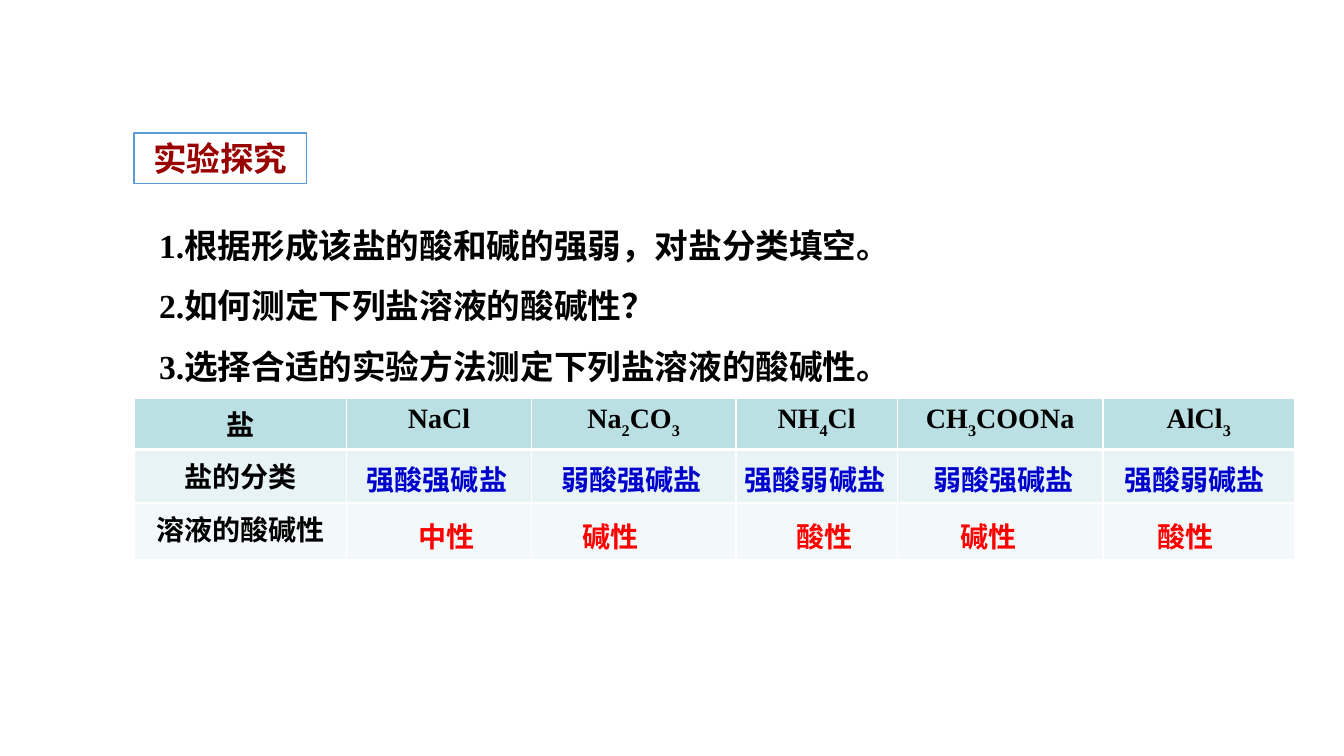
from itertools import accumulate, groupby

from lxml import etree
from pptx import Presentation
from pptx.dml.color import RGBColor
from pptx.enum.shapes import MSO_SHAPE
from pptx.enum.text import MSO_ANCHOR, PP_ALIGN
from pptx.oxml.ns import qn
from pptx.util import Inches, Pt

CENTER, LEFT = PP_ALIGN.CENTER, PP_ALIGN.LEFT
MIDDLE = MSO_ANCHOR.MIDDLE
RECTANGLE = MSO_SHAPE.RECTANGLE

WHITE = RGBColor(0xFF, 0xFF, 0xFF)
BLACK = RGBColor(0, 0, 0)
DARK_RED = RGBColor(0x99, 0, 0)
RED = RGBColor(0xFF, 0, 0)
BLUE = RGBColor(0, 0, 0xCC)
OUTLINE = RGBColor(0x5B, 0x9B, 0xD5)
ROW_FILLS = [RGBColor(0xBB, 0xE0, 0xE3), RGBColor(0xE7, 0xF3, 0xF4), RGBColor(0xF3, 0xF9, 0xFA)]

HEADING = "实验探究"
QUESTIONS = [
    "1.根据形成该盐的酸和碱的强弱，对盐分类填空。",
    "2.如何测定下列盐溶液的酸碱性？",
    "3.选择合适的实验方法测定下列盐溶液的酸碱性。",
]
SALTS = ["NaCl", "Na2CO3", "NH4Cl", "CH3COONa", "AlCl3"]
ROW_LABELS = ["盐", "盐的分类", "溶液的酸碱性"]
SALT_TYPES = ["强酸强碱盐", "弱酸强碱盐", "强酸弱碱盐", "弱酸强碱盐", "强酸弱碱盐"]
ACIDITIES = ["中性", "碱性", "酸性", "碱性", "酸性"]

COLUMNS = [2.11, 1.83, 2.03, 1.6, 2.04, 1.9]
ROWS = [0.51, 0.53, 0.56]
TYPE_INDENTS = [0.1, 0.2, -0.01, 0.26, 0.11]
ACIDITY_TABS = [1.63, 3.75, 5.38, 7.33]
ANSWER_HEIGHT = 0.44


def write(frame, lines, size=20, font="Calibri", color=BLACK, align=LEFT, spacing=None, formula=False):
    """Fill a text frame with bold lines, lowering digits in formulas."""
    for index, line in enumerate(lines):
        paragraph = frame.add_paragraph() if index else frame.paragraphs[0]
        paragraph.alignment = align
        paragraph.line_spacing = spacing
        pieces = groupby(line, str.isdigit) if formula else [(False, line)]
        for lowered, characters in pieces:
            run = paragraph.add_run()
            run.text = "".join(characters)
            run.font.size, run.font.name, run.font.bold = Pt(size), font, True
            run.font.color.rgb = color
            if lowered:
                run.font._element.set("baseline", "-30000")


def add_text(slide, box, lines, **style):
    """Place a wrapping text box and return its frame."""
    frame = slide.shapes.add_textbox(*map(Inches, box)).text_frame
    frame.word_wrap = True
    write(frame, lines, **style)
    return frame


def add_heading(slide, box):
    """Draw the outlined section heading."""
    label = slide.shapes.add_shape(RECTANGLE, *map(Inches, box))
    label.shadow.inherit = False
    label.fill.solid()
    label.fill.fore_color.rgb = WHITE
    label.line.color.rgb = OUTLINE
    label.line.width = Pt(1)
    label.text_frame.vertical_anchor = MIDDLE
    write(label.text_frame, [HEADING], size=24, color=DARK_RED, align=CENTER)


def style_cell(cell, row):
    """Give a cell white borders and the fill of its row."""
    properties = cell._tc.get_or_add_tcPr()
    thick_side = {0: "lnB", 1: "lnT"}.get(row)
    for side in ("lnL", "lnR", "lnT", "lnB"):
        width = Pt(3 if side == thick_side else 1)
        border = etree.SubElement(properties, qn(f"a:{side}"), w=str(width))
        paint = etree.SubElement(border, qn("a:solidFill"))
        etree.SubElement(paint, qn("a:srgbClr"), val=str(WHITE))
    cell.fill.solid()
    cell.fill.fore_color.rgb = ROW_FILLS[row]


def add_salt_table(slide, box):
    """Build the table of salts with its row labels."""
    table = slide.shapes.add_table(len(ROWS), len(COLUMNS), *map(Inches, box)).table
    for column, width in zip(table.columns, COLUMNS):
        column.width = Inches(width)
    for row, height in enumerate(ROWS):
        table.rows[row].height = Inches(height)
        texts = [ROW_LABELS[row]] + (SALTS if row == 0 else [])
        for column in range(len(COLUMNS)):
            cell = table.cell(row, column)
            style_cell(cell, row)
            if column < len(texts):
                write(cell.text_frame, [texts[column]], font="Times New Roman",
                      align=CENTER, formula=True)


def add_answers(slide, box):
    """Lay the salt types and acidities over the table rows."""
    left, top, width, height = box
    column_lefts = [left + offset for offset in accumulate(COLUMNS)]
    type_top = top + ROWS[0] + 0.08
    for column_left, indent, salt_type in zip(column_lefts, TYPE_INDENTS, SALT_TYPES):
        add_text(slide, (column_left + indent, type_top, 1.7, ANSWER_HEIGHT), [salt_type], color=BLUE)
    acidity_box = (left + 2.72, top + height - ANSWER_HEIGHT - 0.01, 8.14, ANSWER_HEIGHT)
    frame = add_text(slide, acidity_box, ["\t".join(ACIDITIES)], color=RED)
    tabs = etree.SubElement(frame.paragraphs[0]._p.get_or_add_pPr(), qn("a:tabLst"))
    for position in ACIDITY_TABS:
        etree.SubElement(tabs, qn("a:tab"), pos=str(Inches(position)), algn="l")


def main():
    """Build and save the slide."""
    deck = Presentation()
    deck.slide_width, deck.slide_height = Inches(13.33), Inches(7.5)
    slide = deck.slides.add_slide(deck.slide_layouts[6])
    table_box = (1.33, 3.95, sum(COLUMNS), sum(ROWS))
    add_heading(slide, (1.33, 1.32, 1.71, 0.5))
    add_text(slide, (1.48, 1.98, 7.7, 1.84), QUESTIONS, size=24,
             font="Times New Roman", spacing=1.5)
    add_salt_table(slide, table_box)
    add_answers(slide, table_box)
    deck.save("out.pptx")


if __name__ == "__main__":
    main()
